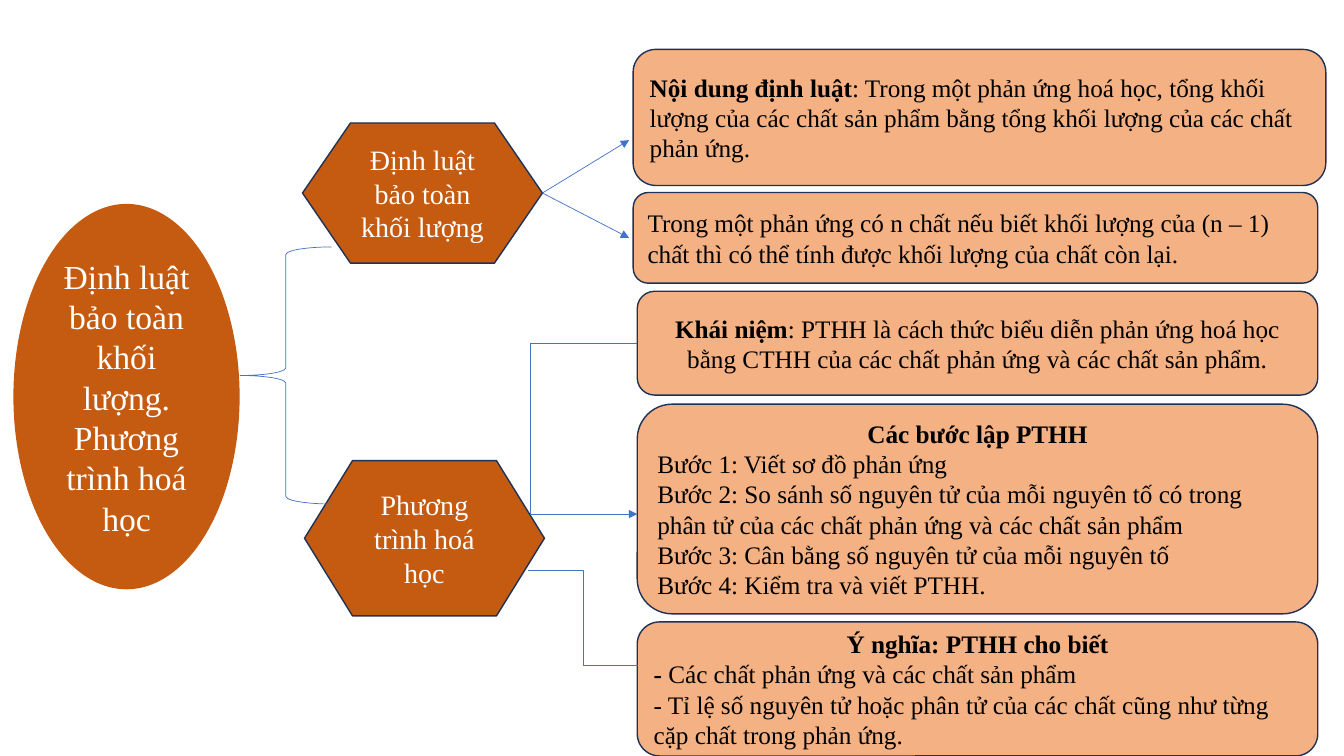
from lxml.etree import SubElement
from pptx import Presentation
from pptx.dml.color import RGBColor
from pptx.enum.shapes import MSO_CONNECTOR, MSO_SHAPE
from pptx.enum.text import MSO_ANCHOR, PP_ALIGN
from pptx.oxml.ns import qn
from pptx.util import Inches, Pt

RUST = RGBColor(0xC5, 0x5A, 0x11)
PEACH = RGBColor(0xF4, 0xB1, 0x83)
NAVY = RGBColor(0x1E, 0x32, 0x56)
BLUE = RGBColor(0x44, 0x72, 0xC4)
WHITE = RGBColor(0xFF, 0xFF, 0xFF)
BLACK = RGBColor(0x00, 0x00, 0x00)
LEFT, CENTER = PP_ALIGN.LEFT, PP_ALIGN.CENTER


class MindMap:
    font = "Times New Roman"

    def __init__(self, slide):
        self.slide = slide

    def outline(self, kind, box, color, width):
        shape = self.slide.shapes.add_shape(kind, *map(Inches, box))
        shape.shadow.inherit = False
        shape.line.color.rgb = color
        shape.line.width = Pt(width)
        return shape

    def add_text(self, shape, paragraphs, size, color):
        frame = shape.text_frame
        frame.word_wrap = True
        frame.vertical_anchor = MSO_ANCHOR.MIDDLE
        for index, (align, runs) in enumerate(paragraphs):
            paragraph = frame.add_paragraph() if index else frame.paragraphs[0]
            paragraph.alignment = align
            for text, bold in runs:
                run = paragraph.add_run()
                run.text = text
                run.font.name = self.font
                run.font.size = Pt(size)
                run.font.bold = bold
                run.font.color.rgb = color

    def topic(self, kind, box, text, size, border):
        shape = self.outline(kind, box, border, 1)
        shape.fill.solid()
        shape.fill.fore_color.rgb = RUST
        self.add_text(shape, [(CENTER, [(text, False)])], size, WHITE)
        return shape

    def detail(self, box, paragraphs):
        shape = self.outline(MSO_SHAPE.ROUNDED_RECTANGLE, box, NAVY, 1)
        shape.fill.solid()
        shape.fill.fore_color.rgb = PEACH
        self.add_text(shape, paragraphs, 18, BLACK)

    def brace(self, box):
        self.outline(MSO_SHAPE.LEFT_BRACE, box, BLUE, 0.5).fill.background()

    def link(self, kind, start, end):
        connector = self.slide.shapes.add_connector(kind, *map(Inches, start + end))
        connector.line.color.rgb = BLUE
        connector.line.width = Pt(0.5)
        SubElement(connector._element.spPr, qn("a:effectLst"))
        return connector

    def arrow(self, start, end, source=None):
        connector = self.link(MSO_CONNECTOR.STRAIGHT, start, end)
        line = connector._element.spPr.find(qn("a:ln"))
        SubElement(line, qn("a:tailEnd"), type="triangle")
        if source is not None:
            connector.begin_connect(source, 3)

    def corner(self, start, end):
        across, up = end[0] - start[0], start[1] - end[1]
        middle_x, middle_y = (start[0] + end[0]) / 2, (start[1] + end[1]) / 2
        connector = self.link(
            MSO_CONNECTOR.ELBOW,
            (middle_x + up / 2, middle_y + across / 2),
            (middle_x - up / 2, middle_y - across / 2),
        )
        properties = connector._element.spPr
        properties.find(qn("a:prstGeom")).set("prst", "bentConnector2")
        properties.find(qn("a:xfrm")).set("rot", "5400000")


DETAILS = [
    ((6.28, 0.49, 6.87, 1.35), [
        (LEFT, [
            ("Nội dung định luật", True),
            (": Trong một phản ứng hoá học, tổng khối lượng của các chất sản phẩm "
             "bằng tổng khối lượng của các chất phản ứng.", False),
        ]),
    ]),
    ((6.28, 1.91, 6.79, 0.9), [
        (LEFT, [
            ("Trong một phản ứng có n chất nếu biết khối lượng của (n – 1) chất "
             "thì có thể tính được khối lượng của chất còn lại.", False),
        ]),
    ]),
    ((6.32, 2.89, 6.75, 1.03), [
        (CENTER, [
            ("Khái niệm", True),
            (": PTHH là cách thức biểu diễn phản ứng hoá học bằng CTHH của "
             "các chất phản ứng và các chất sản phẩm.", False),
        ]),
    ]),
    ((6.32, 4.01, 6.75, 2.08), [
        (CENTER, [("Các bước lập PTHH", True)]),
        (LEFT, [("Bước 1: Viết sơ đồ phản ứng", False)]),
        (LEFT, [("Bước 2: So sánh số nguyên tử của mỗi nguyên tố có trong phân tử "
                 "của các chất phản ứng và các chất sản phẩm", False)]),
        (LEFT, [("Bước 3: Cân bằng số nguyên tử của mỗi nguyên tố", False)]),
        (LEFT, [("Bước 4: Kiểm tra và viết PTHH.", False)]),
    ]),
    ((6.32, 6.17, 6.75, 1.33), [
        (CENTER, [("Ý nghĩa: PTHH cho biết", True)]),
        (LEFT, [("- ", True), ("Các chất phản ứng và các chất sản phẩm", False)]),
        (LEFT, [("- Tỉ lệ số nguyên tử hoặc phân tử của các chất cũng như "
                 "từng cặp chất trong phản ứng.", False)]),
    ]),
]


def main():
    presentation = Presentation()
    presentation.slide_width = Inches(13.33)
    presentation.slide_height = Inches(7.5)
    mind_map = MindMap(presentation.slides.add_slide(presentation.slide_layouts[6]))

    mind_map.topic(MSO_SHAPE.OVAL, (0.14, 2.03, 2.23, 3.81),
                   "Định luật bảo toàn khối lượng. Phương trình hoá học", 24, RUST)
    conservation_law = mind_map.topic(
        MSO_SHAPE.FLOWCHART_PREPARATION, (3, 1.22, 2.38, 1.39),
        "Định luật bảo toàn khối lượng", 20, NAVY)
    mind_map.topic(MSO_SHAPE.FLOWCHART_PREPARATION, (3.02, 4.57, 2.38, 1.54),
                   "Phương trình hoá học", 20, NAVY)
    for box, paragraphs in DETAILS:
        mind_map.detail(box, paragraphs)

    mind_map.brace((2.38, 2.45, 0.91, 2.55))
    mind_map.corner((5.26, 5.1), (6.32, 3.41))
    mind_map.arrow((5.26, 5.1), (6.32, 5.1))
    mind_map.link(MSO_CONNECTOR.ELBOW, (5.24, 5.66), (6.33, 6.6))
    for law_detail_y in (1.39, 2.36):
        mind_map.arrow((5.38, 1.91), (6.24, law_detail_y), conservation_law)

    presentation.save("out.pptx")


if __name__ == "__main__":
    main()
